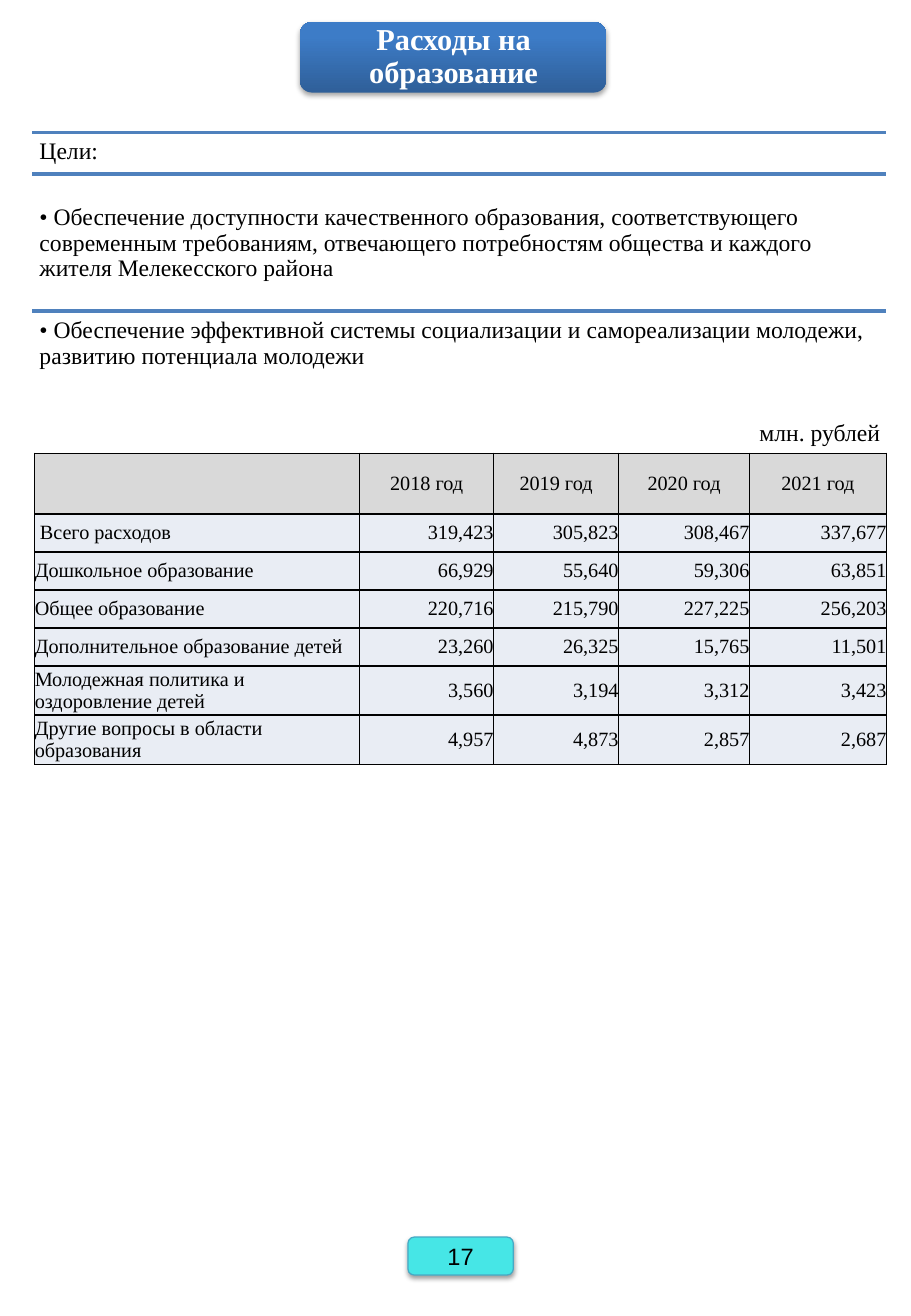
from dataclasses import dataclass

from lxml import etree
from pptx import Presentation
from pptx.dml.color import RGBColor
from pptx.enum.shapes import MSO_CONNECTOR, MSO_SHAPE
from pptx.enum.text import MSO_ANCHOR, MSO_AUTO_SIZE, PP_ALIGN
from pptx.oxml import parse_xml
from pptx.oxml.ns import nsdecls, qn
from pptx.util import Pt

LEFT, CENTER, RIGHT = PP_ALIGN.LEFT, PP_ALIGN.CENTER, PP_ALIGN.RIGHT
TOP, MIDDLE = MSO_ANCHOR.TOP, MSO_ANCHOR.MIDDLE
ROUND, PLATE = MSO_SHAPE.ROUNDED_RECTANGLE, MSO_SHAPE.FLOWCHART_ALTERNATE_PROCESS


@dataclass(frozen=True)
class Theme:
    serif: str = "Times New Roman"
    sans: str = "Arial"
    head: int = 18
    body: int = 14
    cell: int = 12
    ink: str = "000000"
    white: str = "FFFFFF"
    rule: str = "4F81BD"
    dark: str = "2F5F99"
    light: str = "3D7CC7"
    gray: str = "D9D9D9"
    pale: str = "E9EDF4"
    aqua: str = "46E6E6"
    edge: str = "46AAC5"


THEME = Theme()

RULES = (78.5, 103, 184.3)
GOALS = (
    (78.5, 46, "Цели:"),
    (117.4, 60, "• Обеспечение доступности качественного образования, "
     "соответствующего современным требованиям, отвечающего потребностям "
     "общества и каждого жителя Мелекесского района"),
    (184.3, 50, "• Обеспечение эффективной системы социализации и "
     "самореализации молодежи, развитию потенциала молодежи"),
)
COLS = (192.6, 79.4, 74.1, 77.6, 81.2)
ROWS = (36, 22.5, 22.5, 22.5, 22.5, 29.2, 29.2)
DATA = (
    ("", "2018 год", "2019 год", "2020 год", "2021 год"),
    (" Всего расходов", "319,423", "305,823", "308,467", "337,677"),
    ("Дошкольное образование", "66,929", "55,640", "59,306", "63,851"),
    ("Общее образование", "220,716", "215,790", "227,225", "256,203"),
    ("Дополнительное образование детей", "23,260", "26,325", "15,765", "11,501"),
    ("Молодежная политика и оздоровление детей", "3,560", "3,194", "3,312", "3,423"),
    ("Другие вопросы в области образования", "4,957", "4,873", "2,857", "2,687"),
)


def color(code):
    return RGBColor.from_string(code)


def place(shape, box):
    shape.left, shape.top, shape.width, shape.height = map(Pt, box)


def write(frame, text, size, align=LEFT, face=THEME.serif, ink=THEME.ink,
          bold=False, lead=1.0):
    para = frame.paragraphs[0]
    para.alignment = align
    para.line_spacing = lead
    run = para.add_run()
    run.text = text
    font = run.font
    font.name, font.size, font.bold = face, Pt(size), bold
    font.color.rgb = color(ink)


def fit(frame, anchor, inset):
    frame.word_wrap = True
    frame.auto_size = MSO_AUTO_SIZE.NONE
    frame.vertical_anchor = anchor
    frame.margin_left = frame.margin_right = Pt(inset)
    frame.margin_top = frame.margin_bottom = Pt(inset)


def add_text(slide, box, text, inset, **style):
    frame = slide.shapes.add_textbox(*map(Pt, box)).text_frame
    fit(frame, TOP, inset)
    write(frame, text, THEME.body, **style)


def add_plate(slide, kind, box, alpha):
    """Add a preset shape with a soft shadow below it."""
    plate = slide.shapes.add_shape(kind, *map(Pt, box))
    plate.shadow.inherit = False
    glow = parse_xml(
        f'<a:outerShdw {nsdecls("a")} blurRad="{Pt(3.1)}" dist="{Pt(1.8)}" '
        f'dir="5400000" rotWithShape="0"><a:srgbClr val="{THEME.ink}">'
        f'<a:alpha val="{alpha * 1000}"/></a:srgbClr></a:outerShdw>')
    plate.element.spPr.find(qn("a:effectLst")).append(glow)
    return plate


def add_title(slide, text):
    plate = add_plate(slide, ROUND, (177.8, 13, 181.4, 41.8), 35)
    plate.line.fill.background()
    plate.fill.gradient()
    plate.fill.gradient_angle = 90
    tones = ((0, THEME.dark), (0.8, THEME.light))
    for stop, (spot, tone) in zip(plate.fill.gradient_stops, tones):
        stop.position = spot
        stop.color.rgb = color(tone)
    title = slide.shapes.title
    title.element.addprevious(plate.element)
    place(title, (180, 15, 177.8, 38.2))
    fit(title.text_frame, MIDDLE, 5)
    write(title.text_frame, text, THEME.head, CENTER, ink=THEME.white,
          bold=True, lead=0.9)


def add_rule(slide, y):
    rule = slide.shapes.add_connector(
        MSO_CONNECTOR.STRAIGHT, Pt(19.2), Pt(y), Pt(525), Pt(y))
    rule.line.color.rgb = color(THEME.rule)
    rule.line.width = Pt(2)
    etree.SubElement(rule.element.spPr, qn("a:effectLst"))


def add_edges(cell):
    props = cell._tc.get_or_add_tcPr()
    for spot, side in enumerate(("lnL", "lnR", "lnT", "lnB")):
        props.insert(spot, parse_xml(
            f'<a:{side} {nsdecls("a")} w="{Pt(1)}"><a:solidFill>'
            f'<a:srgbClr val="{THEME.ink}"/></a:solidFill></a:{side}>'))


def add_grid(slide):
    box = (20.6, 268.6, sum(COLS), sum(ROWS))
    grid = slide.shapes.add_table(len(ROWS), len(COLS), *map(Pt, box)).table
    grid.horz_banding = False
    for col, width in zip(grid.columns, COLS):
        col.width = Pt(width)
    for r, line in enumerate(DATA):
        grid.rows[r].height = Pt(ROWS[r])
        for c, text in enumerate(line):
            cell = grid.cell(r, c)
            cell.fill.solid()
            cell.fill.fore_color.rgb = color(THEME.pale if r else THEME.gray)
            cell.vertical_anchor = MIDDLE
            cell.margin_left = cell.margin_right = 0
            cell.margin_top = cell.margin_bottom = 0
            add_edges(cell)
            if text:
                align = CENTER if r == 0 else RIGHT if c else LEFT
                write(cell.text_frame, text, THEME.cell, align)


def add_number(slide, text):
    plate = add_plate(slide, PLATE, (241.8, 733, 62.5, 22.5), 38)
    plate.fill.solid()
    plate.fill.fore_color.rgb = color(THEME.aqua)
    plate.line.color.rgb = color(THEME.edge)
    plate.line.width = Pt(0.75)
    fit(plate.text_frame, MIDDLE, 3.6)
    write(plate.text_frame, text, THEME.body, CENTER, face=THEME.sans)


def main():
    deck = Presentation()
    deck.slide_width, deck.slide_height = Pt(540), Pt(779.76)
    slide = deck.slides.add_slide(deck.slide_layouts[5])
    add_title(slide, "Расходы на образование")
    for y in RULES:
        add_rule(slide, y)
    for y, height, text in GOALS:
        add_text(slide, (19.2, y, 506, height), text, 4.2, lead=0.9)
    add_text(slide, (423.4, 244.1, 102, 24.5), "млн. рублей", 3.6, align=RIGHT)
    add_grid(slide)
    add_number(slide, "17")
    deck.save("out.pptx")


if __name__ == "__main__":
    main()
